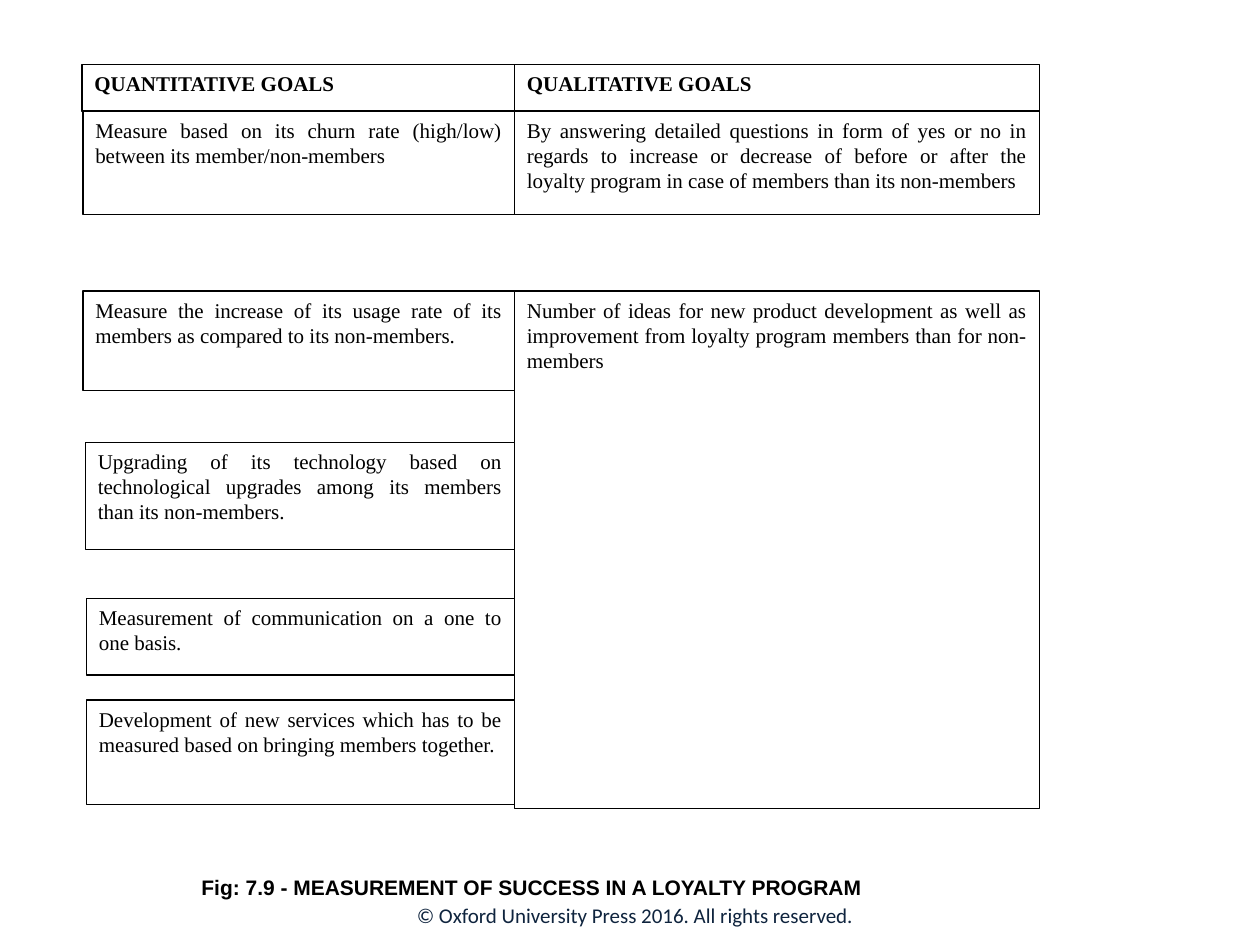
from dataclasses import dataclass

from pptx import Presentation
from pptx.dml.color import RGBColor
from pptx.enum import shapes, text
from pptx.util import Pt


@dataclass(frozen=True)
class Theme:
    """Colours, fonts and sizes of the slide."""
    black: RGBColor = RGBColor(0, 0, 0)
    white: RGBColor = RGBColor(255, 255, 255)
    navy: RGBColor = RGBColor(0x0F, 0x24, 0x3E)
    body_font: str = "Times New Roman"
    caption_font: str = "Arial"
    footer_font: str = "Calibri"
    size: float = 12
    line_width: float = 0.75


THEME = Theme()
DIVIDER = 294
RIGHT_EDGE = 594

HEADERS = [
    (46.8, 36.7, 27.1, "QUANTITATIVE GOALS"),
    (DIVIDER, 36.7, 27.1, "QUALITATIVE GOALS"),
]
GOALS = [
    (47.4, 63.5, 59, "Measure based on its churn rate (high/low) between its member/non-members"),
    (DIVIDER, 63.5, 59, "By answering detailed questions in form of yes or no in regards to increase "
     "or decrease of before or after the loyalty program in case of members than its non-members"),
    (47.4, 166.3, 56.9, "Measure the increase of its usage rate of its members as compared to its non-members."),
    (DIVIDER, 166.3, 295.8, "Number of ideas for new product development as well as improvement "
     "from loyalty program members than for non-members"),
    (48.8, 252.7, 61.2, "Upgrading of its technology based on technological upgrades "
     "among its members than its non-members."),
    (49.4, 342, 43.8, "Measurement of communication on a one to one basis."),
    (49.4, 400.1, 59.7, "Development of new services which has to be measured "
     "based on bringing members together."),
]


def write_text(shape, content, font, color, align, anchor, bold=False):
    """Put one formatted paragraph in a shape."""
    frame = shape.text_frame
    frame.word_wrap = True
    frame.vertical_anchor = anchor
    paragraph = frame.paragraphs[0]
    paragraph.text = content
    paragraph.alignment = align
    paragraph.font.name = font
    paragraph.font.size = Pt(THEME.size)
    paragraph.font.bold = bold
    paragraph.font.color.rgb = color


def add_cell(slide, left, top, height, content, header=False):
    """Add an outlined box that ends at its column's right edge."""
    right = DIVIDER if left < DIVIDER else RIGHT_EDGE
    shape = slide.shapes.add_shape(
        shapes.MSO_SHAPE.RECTANGLE, Pt(left), Pt(top), Pt(right - left), Pt(height))
    shape.shadow.inherit = False
    shape.fill.solid()
    shape.fill.fore_color.rgb = THEME.white
    shape.line.color.rgb = THEME.black
    shape.line.width = Pt(THEME.line_width)
    align = text.PP_ALIGN.LEFT if header else text.PP_ALIGN.JUSTIFY
    write_text(shape, content, THEME.body_font, THEME.black, align, text.MSO_ANCHOR.TOP, header)


def add_label(slide, left, top, width, height, content, font, color, align, bold=False):
    """Add a vertically centred text box and return it."""
    label = slide.shapes.add_textbox(Pt(left), Pt(top), Pt(width), Pt(height))
    write_text(label, content, font, color, align, text.MSO_ANCHOR.MIDDLE, bold)
    return label


def main():
    """Build and save the slide."""
    presentation = Presentation()
    presentation.slide_width, presentation.slide_height = Pt(720), Pt(540)
    slide = presentation.slides.add_slide(presentation.slide_layouts[6])
    for header in HEADERS:
        add_cell(slide, *header, header=True)
    for goal in GOALS:
        add_cell(slide, *goal)
    caption = add_label(
        slide, 108, 468, 564, 60.5, "Fig: 7.9 - MEASUREMENT OF SUCCESS IN A LOYALTY PROGRAM",
        THEME.caption_font, THEME.black, text.PP_ALIGN.LEFT, bold=True)
    caption.text_frame.margin_top = Pt(21)
    add_label(
        slide, 212.4, 508.5, 301, 28.8, "© Oxford University Press 2016. All rights reserved.",
        THEME.footer_font, THEME.navy, text.PP_ALIGN.CENTER)
    presentation.save("out.pptx")


if __name__ == "__main__":
    main()
